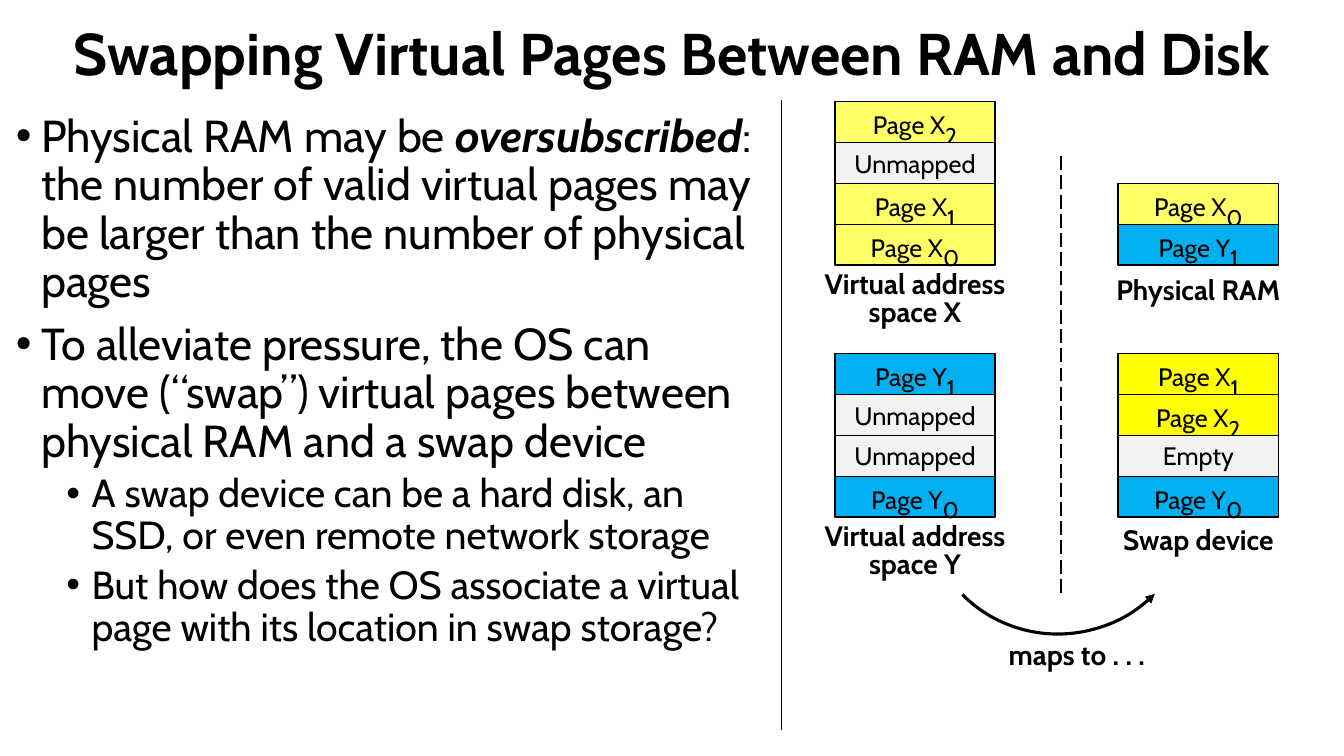
from lxml import etree
from pptx import Presentation
from pptx.dml.color import RGBColor
from pptx.enum.dml import MSO_LINE
from pptx.enum.shapes import MSO_CONNECTOR, MSO_SHAPE
from pptx.enum.text import MSO_ANCHOR, MSO_AUTO_SIZE, PP_ALIGN
from pptx.oxml.ns import qn
from pptx.util import Inches, Pt

CENTER, LEFT = PP_ALIGN.CENTER, PP_ALIGN.LEFT
MIDDLE, TOP = MSO_ANCHOR.MIDDLE, MSO_ANCHOR.TOP
GROW, FIXED = MSO_AUTO_SIZE.SHAPE_TO_FIT_TEXT, MSO_AUTO_SIZE.NONE
RECT, ARC = MSO_SHAPE.RECTANGLE, MSO_SHAPE.ARC
STRAIGHT = MSO_CONNECTOR.STRAIGHT
SOLID, DASH = MSO_LINE.SOLID, MSO_LINE.LONG_DASH

THEME = {
    "font": "Cabin", "ink": "000000",
    "pale": "FFFF66", "gold": "FFFF00", "blue": "00B0F0", "gray": "F2F2F2",
    "title": Pt(42), "body": Pt(32), "item": Pt(28),
    "label": Pt(20), "cell": Pt(18), "sub": Pt(28),
}
INK = RGBColor.from_string(THEME["ink"])


def write(frame, lines, size, look, anchor=TOP, fit=FIXED, bold=False):
    for key, val in {"word_wrap": True, "auto_size": fit, "vertical_anchor": anchor}.items():
        setattr(frame, key, val)
    for num, runs in enumerate(lines):
        para = frame.paragraphs[0] if num == 0 else frame.add_paragraph()
        for key, val in look.items():
            setattr(para, key, val)
        for text, extra in runs:
            run = para.add_run()
            run.text = text
            form = {"name": THEME["font"], "size": size, "bold": bold, **extra}
            for key, val in form.items():
                setattr(run.font, key, val)
            run.font.color.rgb = INK


def label(home, box, lines, look):
    area = home.add_textbox(*map(Inches, box))
    runs = [[(text, {})] for text in lines]
    write(area.text_frame, runs, THEME["label"], look, fit=GROW, bold=True)


deck = Presentation()
deck.slide_width, deck.slide_height = Inches(13.33), Inches(7.5)
slide = deck.slides.add_slide(deck.slide_layouts[6])
shapes = slide.shapes

title = shapes.add_textbox(0, Inches(0.03), deck.slide_width, Inches(1.05))
write(title.text_frame, [[("Swapping Virtual Pages Between RAM and Disk", {})]],
      THEME["title"], {"alignment": CENTER, "line_spacing": 0.9}, MIDDLE, bold=True)

points = [
    (0, [("Physical RAM may be ", {}),
         ("oversubscribed", {"bold": True, "italic": True}),
         (": the number of valid virtual pages may be larger than the number of physical pages", {})]),
    (0, [("To alleviate pressure, the OS can move (“swap”) virtual pages between physical RAM and a swap device", {})]),
    (1, [("A swap device can be a hard disk, an SSD, or even remote network storage",
          {"size": THEME["item"]})]),
    (1, [("But how does the OS associate a virtual page with its location in swap storage?",
          {"size": THEME["item"]})]),
]
body = shapes.add_textbox(*map(Inches, (0.06, 1.08, 7.51, 6.2)))
write(body.text_frame, [runs for _, runs in points], THEME["body"],
      {"alignment": LEFT, "line_spacing": 0.9})
for para, (level, _) in zip(body.text_frame.paragraphs, points):
    para.level = level
    para.space_before = Pt(10 - 5 * level)
    props = para._p.get_or_add_pPr()
    props.set("marL", str(Inches(0.25 + 0.5 * level)))
    props.set("indent", str(Inches(-0.25)))
    etree.SubElement(props, qn("a:buFont")).set("typeface", "Arial")
    etree.SubElement(props, qn("a:buChar")).set("char", "•")

WIDE, ROW = 1.59, 1.62 / 4
COLS, FEET = (8.28, 11.09), (2.63, 5.13)
TIGHT = {"alignment": CENTER, "line_spacing": Pt(20)}
LOOSE = {"alignment": CENTER}
stacks = [
    (1, 0, [("Page X", "0", "pale"), ("Page Y", "1", "blue")],
     ["Physical RAM"], (2.76, 0.44), 0.02, LOOSE),
    (0, 1, [("Page Y", "1", "blue"), ("Unmapped", "", "gray"),
            ("Unmapped", "", "gray"), ("Page Y", "0", "blue")],
     ["Virtual address", "space Y"], (2.18, 0.66), 0.02, TIGHT),
    (0, 0, [("Page X", "2", "pale"), ("Unmapped", "", "gray"),
            ("Page X", "1", "pale"), ("Page X", "0", "pale")],
     ["Virtual address", "space X"], (2.18, 0.66), 0.02, TIGHT),
    (1, 1, [("Page X", "1", "gold"), ("Page X", "2", "gold"),
            ("Empty", "", "gray"), ("Page Y", "0", "blue")],
     ["Swap device"], (1.92, 0.44), 0, LOOSE),
]
for col, foot, pages, name, (wide, high), gap, look in stacks:
    group = shapes.add_group_shape().shapes
    left, base = COLS[col], FEET[foot]
    label(group, (left + (WIDE - wide) / 2, base + gap, wide, high), name, look)
    for num, (text, sub, tint) in enumerate(pages):
        top = base - (len(pages) - num) * ROW
        cell = group.add_shape(RECT, *map(Inches, (left, top, WIDE, ROW)))
        cell.shadow.inherit = False
        cell.fill.solid()
        cell.fill.fore_color.rgb = RGBColor.from_string(THEME[tint])
        cell.line.color.rgb = INK
        cell.line.width = Pt(1)
        runs = [(text, {})] + ([(sub, {"size": THEME["sub"]})] if sub else [])
        write(cell.text_frame, [runs], THEME["cell"], LOOSE, MIDDLE)
        if sub:
            low = cell.text_frame.paragraphs[0].runs[1]
            low._r.get_or_add_rPr().set("baseline", "-25000")

for left, top, foot, dash in [(7.75, 0.99, 7.24, SOLID), (10.52, 1.55, 5.88, DASH)]:
    rule = shapes.add_connector(STRAIGHT, *map(Inches, (left, top, left, foot)))
    rule.line.color.rgb = INK
    rule.line.width = Pt(1.25)
    rule.line.dash_style = dash
    etree.SubElement(rule._element.spPr, qn("a:effectLst"))

group = shapes.add_group_shape().shapes
curve = group.add_shape(ARC, *map(Inches, (9.15, 3.6, 2.72, 2.68)))
curve.rotation = 135.2
curve.shadow.inherit = False
curve.fill.background()
curve.line.color.rgb = INK
curve.line.width = Pt(2.25)
etree.SubElement(curve.line._get_or_add_ln(), qn("a:headEnd")).set("type", "triangle")
label(group, (9.3, 6.28, 2.76, 0.44), ["maps to . . ."], LOOSE)

deck.save("out.pptx")
